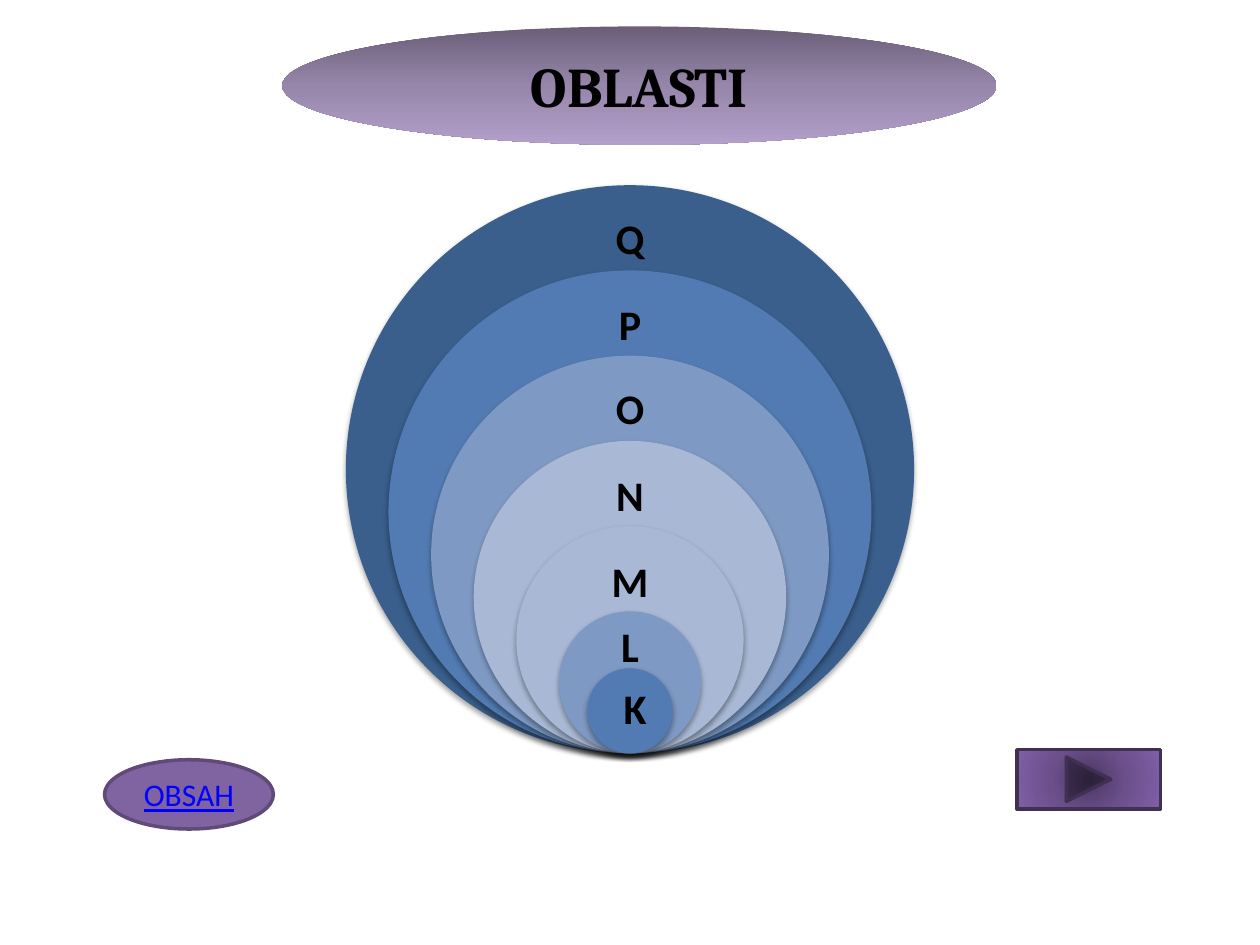
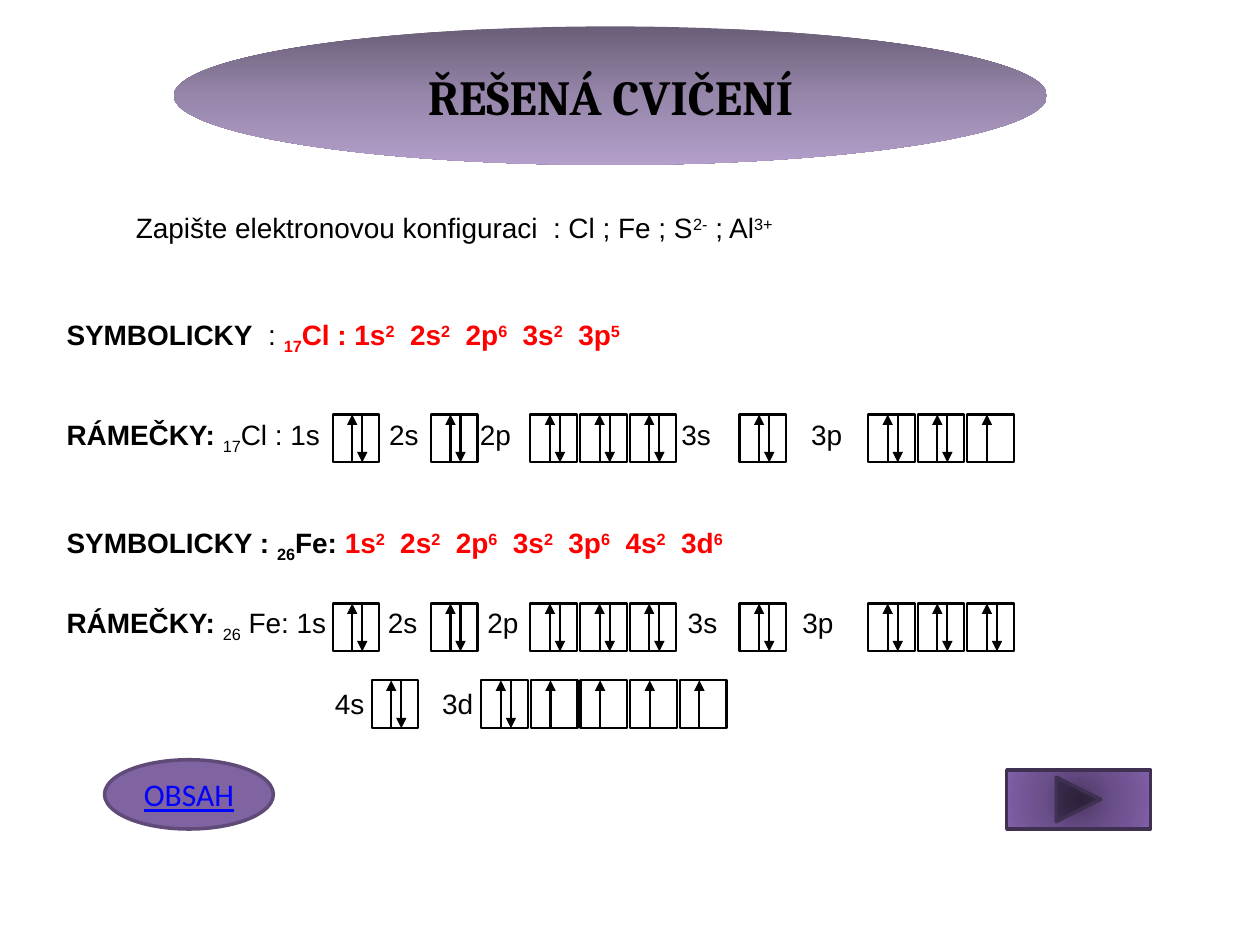
from pptx import Presentation
from pptx.dml.color import RGBColor
from pptx.enum.shapes import MSO_CONNECTOR, MSO_SHAPE
from pptx.enum.text import MSO_ANCHOR, MSO_AUTO_SIZE, PP_ALIGN
from pptx.oxml import parse_xml
from pptx.oxml.ns import nsdecls, qn
from pptx.util import Inches, Pt
from lxml.etree import SubElement

COLS, ROWS = 100, 75
INK = {
    "black": "000000", "white": "FFFFFF", "red": "FF0000", "link": "0000FF",
    "navy": "3A5F8C", "blue": "517BB2", "steel": "7E99C3", "mist": "A9B9D5",
    "violet": "8064A2", "plum": "5F4A78", "dark": "403152",
}
FADE = ("6A5E78", "9686AA", "B39FCA")
GLOW = ("4C3863", "6C508C", "805FA7")
LINEAR = '<a:lin ang="5400000" scaled="0"/>'
RADIAL = ('<a:path path="circle"><a:fillToRect l="50000" t="50000" '
          'r="50000" b="50000"/></a:path>')
BASE = {"^": "30000", "_": "-25000"}

SHELLS = [
    ("Q", 1, "navy", 4.45, 16.9, 4.5),
    ("P", 0.85, "blue", 4.45, 16.5, 4.4),
    ("O", 0.7, "steel", 4.4, 16.3, 4.4),
    ("N", 0.55, "mist", 4.55, 13.4, 4.5),
    ("M", 0.4, "mist", 4.55, 11.7, 4.5),
    ("L", 0.25, "steel", 2.95, 7.7, 2.7),
    ("K", 0.15, "blue", 3.4, 4.8, 3.4),
]
STARTS = (26.4, 34.2, 42.1, 58.7, 68.9)
CHLORINE = ("2", "2", "222", "2", "221")
IRON = ("2", "2", "222", "2", "222")


def config(text):
    runs = []
    for part in text.split():
        gap = "  " if runs else ""
        runs += [(gap + part[:-1], "br"), (part[-1], "br^")]
    return runs


class Deck:
    def __init__(self):
        self.prs = Presentation()
        self.prs.slide_width, self.prs.slide_height = Inches(10), Inches(7.5)
        self.slide = None

    def page(self):
        self.slide = self.prs.slides.add_slide(self.prs.slide_layouts[6])

    def place(self, x, y, *size):
        wide, high = self.prs.slide_width / COLS, self.prs.slide_height / ROWS
        return [round(v * u) for v, u in zip((x, y) + size, (wide, high) * 2)]

    def color(self, name):
        return RGBColor.from_string(INK[name])

    def shape(self, kind, box, fill, line=None, width=2):
        shape = self.slide.shapes.add_shape(kind, *self.place(*box))
        shape.shadow.inherit = False
        shape.fill.solid()
        shape.fill.fore_color.rgb = self.color(fill)
        if line:
            shape.line.color.rgb = self.color(line)
            shape.line.width = Pt(width)
        else:
            shape.line.fill.background()
        return shape

    def fade(self, shape, stops, course):
        marks = "".join(
            f'<a:gs pos="{i * 50000}"><a:srgbClr val="{hue}"/></a:gs>'
            for i, hue in enumerate(stops))
        grad = parse_xml(f'<a:gradFill {nsdecls("a")} rotWithShape="1">'
                         f'<a:gsLst>{marks}</a:gsLst>{course}</a:gradFill>')
        props = shape._element.spPr
        props.replace(props.find(qn("a:solidFill")), grad)

    def shade(self, shape):
        effects = shape._element.spPr.find(qn("a:effectLst"))
        outer = SubElement(effects, qn("a:outerShdw"), blurRad="40000",
                           dist="23000", dir="5400000", rotWithShape="0")
        hue = SubElement(outer, qn("a:srgbClr"), val=INK["black"])
        SubElement(hue, qn("a:alpha"), val="35000")

    def style(self, run, font, size, ink="black", bold=False):
        run.font.name, run.font.size, run.font.bold = font, Pt(size), bold
        run.font.color.rgb = self.color(ink)

    def label(self, shape, text, font, size, ink="black", bold=True):
        frame = shape.text_frame
        frame.text = text
        frame.word_wrap = True
        frame.vertical_anchor = MSO_ANCHOR.MIDDLE
        para = frame.paragraphs[0]
        para.alignment = PP_ALIGN.CENTER
        self.style(para.runs[0], font, size, ink, bold)
        return para

    def title(self, text, box, size):
        oval = self.shape(MSO_SHAPE.OVAL, box, "violet")
        self.fade(oval, FADE, LINEAR)
        self.label(oval, text, "Cambria", size)

    def menu(self):
        oval = self.shape(MSO_SHAPE.OVAL, (8.3, 60.3, 13.4, 5.5), "violet", "plum")
        para = self.label(oval, "OBSAH", "Calibri", 18, "link", False)
        para.runs[0].font.underline = True

    def button(self, x, y):
        kind = MSO_SHAPE.ACTION_BUTTON_FORWARD_OR_NEXT
        key = self.shape(kind, (x, y, 11.4, 4.7), "violet", "dark")
        self.fade(key, GLOW, RADIAL)

    def shell(self, name, share, fill, drop, wide, high):
        size = 45.1 * share
        top = 59.8 - size
        ring = self.shape(MSO_SHAPE.OVAL, (50 - size / 2, top, size, size), fill)
        self.shade(ring)
        box = (50 - wide / 2, top + drop - high / 2, wide, high)
        note = self.slide.shapes.add_textbox(*self.place(*box))
        frame = note.text_frame
        frame.margin_left = frame.margin_right = Inches(0.19)
        frame.margin_top = frame.margin_bottom = Inches(0.19)
        self.label(note, name, "Calibri", 24).line_spacing = 0.9

    def text(self, box, runs, tabs=()):
        note = self.slide.shapes.add_textbox(*self.place(*box))
        frame = note.text_frame
        frame.word_wrap = True
        frame.auto_size = MSO_AUTO_SIZE.SHAPE_TO_FIT_TEXT
        frame.vertical_anchor = MSO_ANCHOR.MIDDLE
        para = frame.paragraphs[0]
        for words, marks in runs:
            run = para.add_run()
            run.text = words
            self.style(run, "Arial", 16, "red" if "r" in marks else "black", "b" in marks)
            for mark in BASE:
                if mark in marks:
                    run._r.get_or_add_rPr().set("baseline", BASE[mark])
        if tabs:
            stops = SubElement(para._p.get_or_add_pPr(), qn("a:tabLst"))
            for stop in tabs:
                SubElement(stops, qn("a:tab"), pos=str(self.place(stop, 0)[0]), algn="l")

    def arrow(self, x, start, end):
        ends = self.place(x, start) + self.place(x, end)
        line = self.slide.shapes.add_connector(MSO_CONNECTOR.STRAIGHT, *ends)
        line.line.color.rgb = self.color("black")
        line.line.width = Pt(1.25)
        SubElement(line.line._get_or_add_ln(), qn("a:tailEnd"), type="triangle")
        SubElement(line._element.spPr, qn("a:effectLst"))

    def cells(self, y, starts, groups):
        for start, group in zip(starts, groups):
            for i, count in enumerate(group):
                x = start + i * 3.94
                self.shape(MSO_SHAPE.RECTANGLE, (x, y, 3.7, 3.8), "white", "black", 1.25)
                self.arrow(x + 1.55, y + 3.8, y)
                if count == "2":
                    self.arrow(x + 2.35, y, y + 3.8)


def main():
    deck = Deck()

    deck.page()
    for shell in SHELLS:
        deck.shell(*shell)
    deck.title("OBLASTI", (22.4, 2.1, 56.7, 9.4), 32)
    deck.button(80.7, 59.5)
    deck.menu()

    deck.page()
    deck.text((9.8, 16.2, 58.7, 3.7), [
        ("Zapište elektronovou konfiguraci  : Cl ; Fe ; S", ""),
        ("2-", "^"), (" ; Al", ""), ("3+", "^")])
    deck.title("ŘEŠENÁ CVIČENÍ", (13.8, 2.1, 69.3, 11), 28)
    deck.text((4.3, 24.9, 48.4, 3.7), [
        ("SYMBOLICKY", "b"), ("  : ", ""), ("17", "br_"), ("Cl : ", "br")]
        + config("1s2 2s2 2p6 3s2 3p5"))
    deck.text((4.3, 32.8, 70.9, 3.7), [
        ("RÁMEČKY: ", "b"), ("17", "_"), ("Cl : 1s\t2s\t2p\t3s\t3p", "")],
        (25.6, 32.8, 48.8, 59.1))
    deck.cells(32.9, STARTS, CHLORINE)
    deck.text((4.3, 41.4, 60.2, 3.7), [
        ("SYMBOLICKY : ", "b"), ("26", "b_"), ("Fe: ", "b")]
        + config("1s2 2s2 2p6 3s2 3p6 4s2 3d6"))
    deck.text((4.3, 47.7, 70.9, 3.7), [
        ("RÁMEČKY: ", "b"), ("26", "_"), (" Fe: 1s\t2s\t2p\t3s\t3p", "")],
        (25.5, 33.4, 49.3, 58.4))
    deck.cells(47.9, STARTS, IRON)
    deck.text((25.6, 54, 34.2, 3.7), [("4s\t3d", "")], (8.5,))
    deck.cells(54, (29.5, 38.2), ("2", "21111"))
    deck.menu()
    deck.button(79.9, 61.1)

    deck.prs.save("out.pptx")


if __name__ == "__main__":
    main()
